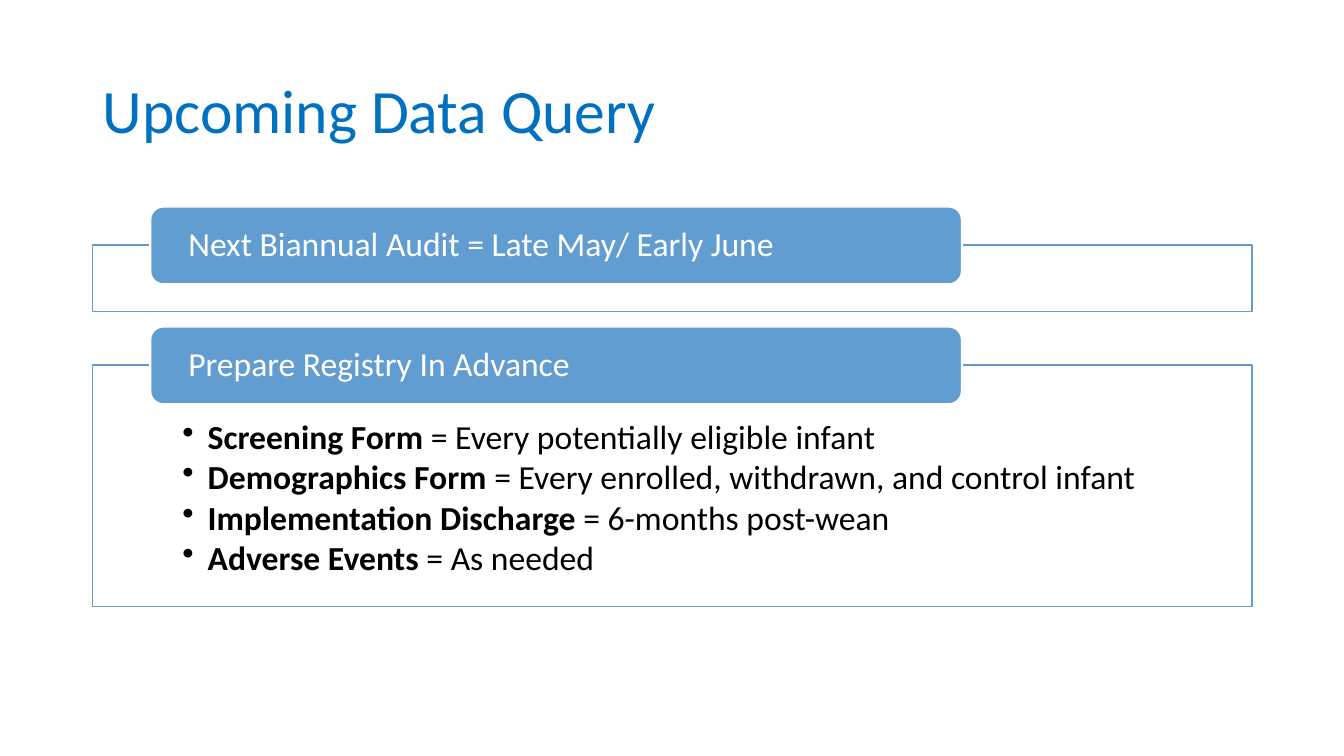
"""Build the Upcoming Data Query slide with two headed panels."""
import pptx
import pptx.dml.color
import pptx.enum.shapes
import pptx.enum.text
import pptx.oxml
import pptx.util
from pptx.util import Inches

THEME = {
    "font": "Calibri",
    "title": pptx.dml.color.RGBColor.from_string("0070C0"),
    "accent": pptx.dml.color.RGBColor.from_string("629DD1"),
    "white": pptx.dml.color.RGBColor.from_string("FFFFFF"),
    "black": pptx.dml.color.RGBColor.from_string("000000"),
    "title_size": pptx.util.Pt(44),
    "body_size": pptx.util.Pt(24),
}
SHAPES = pptx.enum.shapes.MSO_SHAPE
ANCHORS = pptx.enum.text.MSO_ANCHOR
PANELS = [
    (2.43, 0.66, "Next Biannual Audit = Late May/ Early June", []),
    (3.62, 2.4, "Prepare Registry In Advance", [
        ("Screening Form ", "= Every potentially eligible infant"),
        ("Demographics Form ", "= Every enrolled, withdrawn, and control infant"),
        ("Implementation Discharge ", "= 6-months post-wean"),
        ("Adverse Events ", "= As needed"),
    ]),
]


def set_frame(box, anchor, left, top, right, bottom):
    """Set the wrapping, anchor and margins of a text frame."""
    values = {
        "word_wrap": True,
        "vertical_anchor": anchor,
        "margin_left": Inches(left),
        "margin_top": Inches(top),
        "margin_right": Inches(right),
        "margin_bottom": Inches(bottom),
    }
    for name, value in values.items():
        setattr(box.text_frame, name, value)
    return box.text_frame


def add_span(para, text, size, color, bold=False):
    """Add formatted text to a left-aligned paragraph."""
    para.alignment = pptx.enum.text.PP_ALIGN.LEFT
    para.line_spacing = 0.9
    span = para.add_run()
    span.text = text
    for name, value in {"name": THEME["font"], "size": size, "bold": bold}.items():
        setattr(span.font, name, value)
    span.font.color.rgb = color


deck = pptx.Presentation()
deck.slide_width, deck.slide_height = Inches(13.33), Inches(7.5)
page = deck.slides.add_slide(deck.slide_layouts[6])

title = page.shapes.add_textbox(Inches(0.92), Inches(0.4), Inches(11.5), Inches(1.45))
frame = set_frame(title, ANCHORS.MIDDLE, 0.1, 0.05, 0.1, 0.05)
add_span(frame.paragraphs[0], "Upcoming Data Query", THEME["title_size"], THEME["title"])

for top, height, heading, items in PANELS:
    panel = page.shapes.add_shape(
        SHAPES.RECTANGLE, Inches(0.92), Inches(top), Inches(11.5), Inches(height))
    header = page.shapes.add_shape(
        SHAPES.ROUNDED_RECTANGLE, Inches(1.49), Inches(top - 0.38), Inches(8.05), Inches(0.77))
    styles = [
        (panel, THEME["white"], THEME["accent"], 1),
        (header, THEME["accent"], THEME["white"], 1.5),
    ]
    for box, fill, line, width in styles:
        box.shadow.inherit = False
        box.fill.solid()
        box.fill.fore_color.rgb = fill
        box.line.color.rgb = line
        box.line.width = pptx.util.Pt(width)
    color = panel.fill._xPr.find(".//" + pptx.oxml.ns.qn("a:srgbClr"))
    alpha = pptx.oxml.parse_xml(f'<a:alpha {pptx.oxml.ns.nsdecls("a")} val="90000"/>')
    color.append(alpha)

    frame = set_frame(header, ANCHORS.MIDDLE, 0.34, 0.03, 0.34, 0.03)
    add_span(frame.paragraphs[0], heading, THEME["body_size"], THEME["white"])

    frame = set_frame(panel, ANCHORS.TOP, 0.89, 0.55, 0.89, 0.19)
    for index, (form, detail) in enumerate(items):
        para = frame.add_paragraph() if index else frame.paragraphs[0]
        para.level = 1
        para.space_after = pptx.util.Pt(3)
        properties = para._p.get_or_add_pPr()
        properties.set("marL", str(Inches(0.25)))
        properties.set("indent", str(Inches(-0.25)))
        bullet = pptx.oxml.parse_xml(f'<a:buChar {pptx.oxml.ns.nsdecls("a")} char="•"/>')
        properties.append(bullet)
        add_span(para, form, THEME["body_size"], THEME["black"], True)
        add_span(para, detail, THEME["body_size"], THEME["black"])

deck.save("out.pptx")
